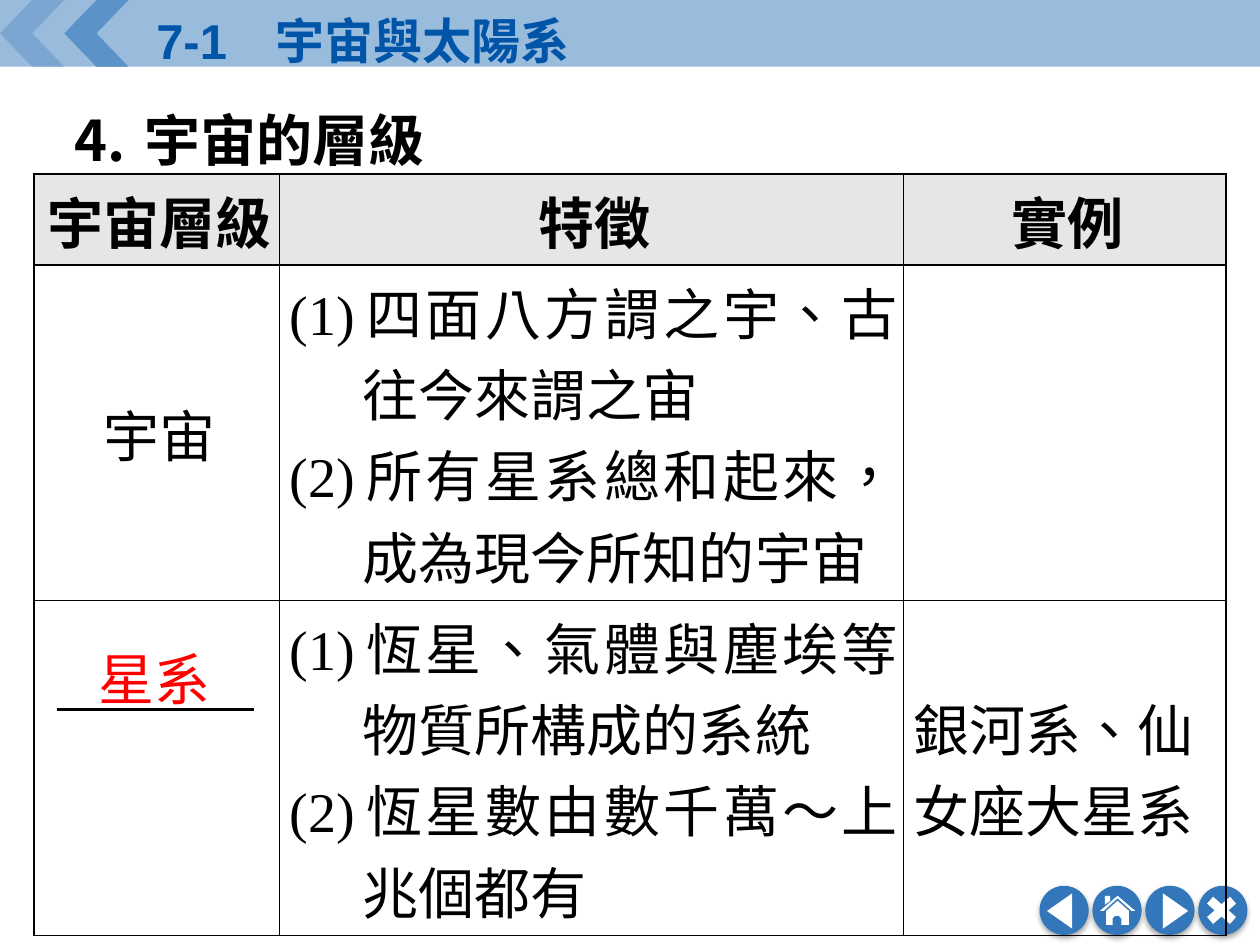
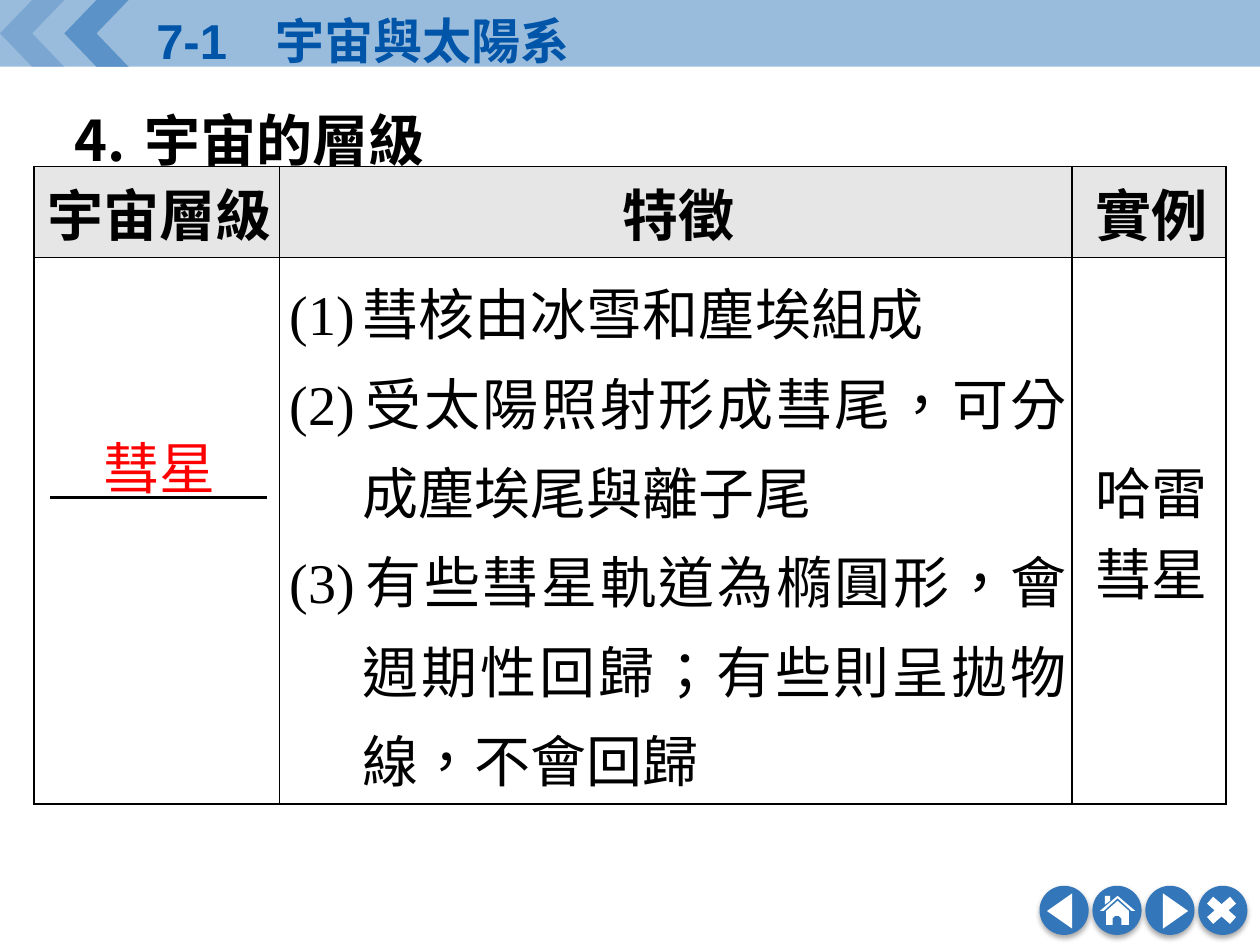
import dataclasses

import lxml.etree
import pptx
import pptx.dml.color
import pptx.enum.shapes
import pptx.enum.text
import pptx.oxml.ns
import pptx.util

Inches = pptx.util.Inches
Pt = pptx.util.Pt
SHAPE = pptx.enum.shapes.MSO_SHAPE
ALIGN = pptx.enum.text.PP_ALIGN
ANCHOR = pptx.enum.text.MSO_ANCHOR
qn = pptx.oxml.ns.qn


@dataclasses.dataclass(frozen=True)
class Theme:
    band: str = "0055A9"
    button: str = "3377BA"
    icon: str = "FFFFFF"
    ink: str = "000000"
    answer: str = "FF0000"
    header_fill: str = "E6E6E6"
    chapter_font: str = "Arial"
    text_font: str = "Times New Roman"
    chapter_size: int = 28
    text_size: int = 32


THEME = Theme()
CHAPTER = "7-1　宇宙與太陽系"
SECTION = "宇宙的層級"
SECTION_NUMBER = 4
HEADERS = ["宇宙層級", "特徵", "實例"]
HEADER_HEIGHT = 0.61
TABLE_LEFT = 0.27
TABLE_WIDTH = 9.46
CELL_INSET = 0.04

BUTTON_TOP = 7.03
BUTTON_SIZE = 0.39
BUTTON_LEFT = 8.25
BUTTON_STEP = 0.42

HOUSE_OUTLINES = [
    [(8.87, 7.15), (8.96, 7.23), (8.96, 7.34), (8.9, 7.34), (8.9, 7.29),
     (8.88, 7.27), (8.85, 7.27), (8.83, 7.29), (8.83, 7.34), (8.78, 7.34),
     (8.78, 7.23)],
    [(8.77, 7.11), (8.81, 7.11), (8.81, 7.15), (8.77, 7.18)],
    [(8.87, 7.11), (9.01, 7.23), (8.98, 7.23), (8.87, 7.13), (8.76, 7.23),
     (8.73, 7.23)],
]


def rgb(color):
    return pptx.dml.color.RGBColor.from_string(color)


def add_element(parent, tag, **attributes):
    element = lxml.etree.SubElement(parent, qn(tag))
    for name, value in attributes.items():
        element.set(name, str(value))
    return element


def place(shape, left, top, width, height):
    shape.left, shape.top = Inches(left), Inches(top)
    shape.width, shape.height = Inches(width), Inches(height)


def add_run(paragraph, text, color=THEME.ink, bold=False,
            font=THEME.text_font, size=THEME.text_size):
    run = paragraph.add_run()
    run.text = text
    run.font.name = font
    run.font.size = Pt(size)
    run.font.bold = bold
    run.font.color.rgb = rgb(color)
    run.font._element.set("lang", "zh-TW")


def set_indent(paragraph, left, first_line=0):
    properties = paragraph._p.get_or_add_pPr()
    properties.set("marL", str(Inches(left)))
    properties.set("indent", str(Inches(first_line)))
    return properties


def paint(shape, color, opacity=100):
    shape.shadow.inherit = False
    shape.fill.solid()
    shape.fill.fore_color.rgb = rgb(color)
    shape.line.fill.background()
    if opacity < 100:
        color_element = shape._element.spPr.find(qn("a:solidFill"))[0]
        add_element(color_element, "a:alpha", val=opacity * 1000)


def add_filled(slide, kind, left, top, width, height, color, opacity=100, rotation=0):
    shape = slide.shapes.add_shape(
        kind, Inches(left), Inches(top), Inches(width), Inches(height))
    paint(shape, color, opacity)
    shape.rotation = rotation
    return shape


def add_header_band(slide):
    add_filled(slide, SHAPE.RECTANGLE, 0, 0, 10, 0.53, THEME.band, 40)
    for left, opacity in [(0, 20), (0.51, 40)]:
        add_filled(slide, SHAPE.CHEVRON, left, 0, 0.51, 0.53, THEME.band, opacity, 180)


def add_button_disc(slide, left):
    disc = add_filled(slide, SHAPE.OVAL, left, BUTTON_TOP, BUTTON_SIZE, BUTTON_SIZE,
                      THEME.button)
    effects = disc._element.spPr.find(qn("a:effectLst"))
    shadow = add_element(effects, "a:outerShdw", blurRad=Pt(3.1), dist=Pt(1.8),
                         dir=90 * 60000, algn="ctr", rotWithShape=0)
    shadow_color = add_element(shadow, "a:srgbClr", val=THEME.ink)
    add_element(shadow_color, "a:alpha", val=35000)


def add_house(slide):
    builder = None
    for outline in HOUSE_OUTLINES:
        points = [(Inches(x), Inches(y)) for x, y in outline]
        if builder is None:
            builder = slide.shapes.build_freeform(*points[0])
        else:
            builder.move_to(*points[0])
        builder.add_line_segments(points[1:], close=True)
    paint(builder.convert_to_shape(), THEME.icon)


def add_navigation(slide):
    for index in range(4):
        add_button_disc(slide, BUTTON_LEFT + index * BUTTON_STEP)
    for left, rotation in [(8.27, 270), (9.19, 90)]:
        add_filled(slide, SHAPE.ISOSCELES_TRIANGLE, left, 7.13, 0.28, 0.2,
                   THEME.icon, rotation=rotation)
    add_house(slide)
    add_filled(slide, SHAPE.MATH_MULTIPLY, 9.52, 7.07, 0.35, 0.31, THEME.icon)


def bring_to_front(slide, shape):
    slide.shapes._spTree.append(shape._element)


def add_chapter_title(slide):
    title = slide.shapes.title
    bring_to_front(slide, title)
    place(title, 1.14, 0.03, 4.33, 0.57)
    frame = title.text_frame
    frame.vertical_anchor = ANCHOR.TOP
    frame.auto_size = pptx.enum.text.MSO_AUTO_SIZE.NONE
    paragraph = frame.paragraphs[0]
    paragraph.alignment = ALIGN.LEFT
    add_run(paragraph, CHAPTER, THEME.band, True, THEME.chapter_font, THEME.chapter_size)


def add_section_heading(slide):
    body = slide.placeholders[1]
    bring_to_front(slide, body)
    place(body, 0.49, 0.68, 9.01, 0.64)
    body.text_frame.auto_size = pptx.enum.text.MSO_AUTO_SIZE.NONE
    paragraph = body.text_frame.paragraphs[0]
    paragraph.alignment = ALIGN.JUSTIFY
    paragraph.line_spacing = 1.2
    properties = set_indent(paragraph, 0.56, -0.56)
    add_element(properties, "a:buFont", typeface="+mj-ea")
    add_element(properties, "a:buAutoNum", type="arabicPeriod", startAt=SECTION_NUMBER)
    add_run(paragraph, SECTION, bold=True)


def add_cell_borders(cell):
    properties = cell._tc.get_or_add_tcPr()
    for side in ("L", "R", "T", "B"):
        border = add_element(properties, f"a:ln{side}", w=Pt(1))
        fill = add_element(border, "a:solidFill")
        add_element(fill, "a:srgbClr", val=THEME.ink)


def fill_cell(cell, lines, alignment, header=False, numbered=False, line_spacing=None):
    add_cell_borders(cell)
    if header:
        cell.fill.solid()
        cell.fill.fore_color.rgb = rgb(THEME.header_fill)
    else:
        cell.fill.background()
    cell.vertical_anchor = ANCHOR.MIDDLE
    cell.margin_left = cell.margin_right = Inches(CELL_INSET)
    cell.margin_top = cell.margin_bottom = Inches(CELL_INSET)
    frame = cell.text_frame
    for index, line in enumerate(lines):
        paragraph = frame.add_paragraph() if index else frame.paragraphs[0]
        paragraph.alignment = alignment
        if numbered:
            set_indent(paragraph, 0.62, -0.58)
            paragraph.line_spacing = line_spacing
            line = f"({index + 1})\t{line}"
        else:
            set_indent(paragraph, 0.04)
        add_run(paragraph, line, bold=header)


def add_level_table(slide, top, widths, row_height, levels, example_alignment,
                    line_spacing=None):
    """Each level is (name, list of features, example); empty text leaves a blank cell."""
    height = HEADER_HEIGHT + row_height * len(levels)
    table = slide.shapes.add_table(
        len(levels) + 1, len(HEADERS), Inches(TABLE_LEFT), Inches(top),
        Inches(TABLE_WIDTH), Inches(height)).table
    table.first_row = table.horz_banding = False
    for column, width in zip(table.columns, widths):
        column.width = Inches(width)
    for index, row in enumerate(table.rows):
        row.height = Inches(row_height if index else HEADER_HEIGHT)
    for cell, header in zip(table.rows[0].cells, HEADERS):
        fill_cell(cell, [header], ALIGN.CENTER, header=True)
    for index, (name, features, example) in enumerate(levels, 1):
        fill_cell(table.cell(index, 0), [name] if name else [], ALIGN.CENTER)
        fill_cell(table.cell(index, 1), features, ALIGN.JUSTIFY,
                  numbered=True, line_spacing=line_spacing)
        fill_cell(table.cell(index, 2), [example] if example else [], example_alignment)


def add_answer(slide, text, left, top, width, line_start, line_end, line_top):
    """A red answer above its blank line."""
    line = slide.shapes.add_connector(
        pptx.enum.shapes.MSO_CONNECTOR.STRAIGHT, Inches(line_start), Inches(line_top),
        Inches(line_end), Inches(line_top))
    line.line.color.rgb = rgb(THEME.ink)
    line.line.width = Pt(2)
    add_element(line._element.spPr, "a:effectLst")
    box = slide.shapes.add_textbox(Inches(left), Inches(top), Inches(width), Inches(0.64))
    box.text_frame.word_wrap = True
    paragraph = box.text_frame.paragraphs[0]
    paragraph.alignment = ALIGN.CENTER
    add_run(paragraph, text, THEME.answer)


def add_lesson_slide(presentation):
    slide = presentation.slides.add_slide(presentation.slide_layouts[1])
    add_header_band(slide)
    add_navigation(slide)
    add_chapter_title(slide)
    add_section_heading(slide)
    return slide


def main():
    presentation = pptx.Presentation()
    presentation.slide_width, presentation.slide_height = Inches(10), Inches(7.5)

    galaxies = add_lesson_slide(presentation)
    add_level_table(galaxies, 1.38, [1.95, 4.95, 2.56], 2.37, [
        ("宇宙", ["四面八方謂之宇、古往今來謂之宙",
                "所有星系總和起來，成為現今所知的宇宙"], ""),
        ("", ["恆星、氣體與塵埃等物質所構成的系統",
              "恆星數由數千萬～上兆個都有"], "銀河系、仙女座大星系"),
    ], ALIGN.LEFT)
    add_answer(galaxies, "星系", 0.55, 5.07, 1.36, 0.45, 2.02, 5.63)

    comets = add_lesson_slide(presentation)
    add_level_table(comets, 1.32, [1.95, 6.29, 1.22], 3.72, [
        ("", ["彗核由冰雪和塵埃組成",
              "受太陽照射形成彗尾，可分成塵埃尾與離子尾",
              "有些彗星軌道為橢圓形，會週期性回歸；有些則呈拋物線，不會回歸"], "哈雷彗星"),
    ], ALIGN.CENTER, line_spacing=1.1)
    add_answer(comets, "彗星", 0.4, 3.39, 1.73, 0.4, 2.12, 3.95)

    presentation.save("out.pptx")


if __name__ == "__main__":
    main()
